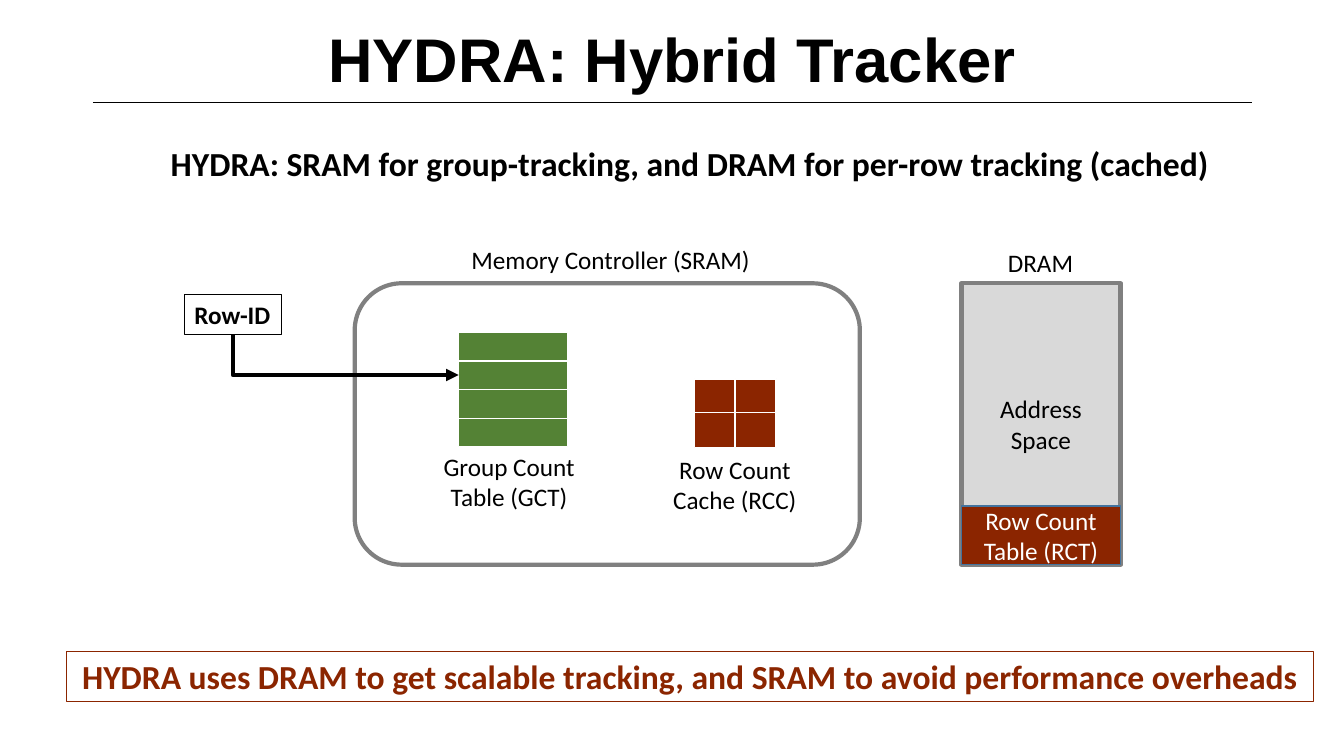
import pptx
import pptx.util
import pptx.dml.color
import pptx.enum.shapes
import pptx.enum.text
import pptx.oxml
import pptx.oxml.ns
from pptx.util import Cm, Pt

SHAPE = pptx.enum.shapes.MSO_SHAPE
CONNECTOR = pptx.enum.shapes.MSO_CONNECTOR
ALIGN = pptx.enum.text.PP_ALIGN
ANCHOR = pptx.enum.text.MSO_ANCHOR
FIT = pptx.enum.text.MSO_AUTO_SIZE

BLACK, WHITE, GRAY, RED, GREEN = "000000", "FFFFFF", "808080", "8B2500", "548235"


def style(shape, fill, line, width):
    """Set fill and outline; None as fill leaves the shape open."""
    shape.shadow.inherit = False
    if fill:
        shape.fill.solid()
        shape.fill.fore_color.rgb = pptx.dml.color.RGBColor.from_string(fill)
    else:
        shape.fill.background()
    shape.line.color.rgb = pptx.dml.color.RGBColor.from_string(line)
    shape.line.width = Pt(width)


def write(shape, text, size=18, color=BLACK, bold=False, align=ALIGN.CENTER,
          anchor=ANCHOR.TOP, wrap=True, fit=FIT.NONE, font="Calibri"):
    frame = shape.text_frame
    frame.text = text
    frame.word_wrap = wrap
    frame.auto_size = fit
    frame.vertical_anchor = anchor
    for paragraph in frame.paragraphs:
        paragraph.alignment = align
        paragraph.font.name = font
        paragraph.font.size = Pt(size)
        paragraph.font.bold = bold
        paragraph.font.color.rgb = pptx.dml.color.RGBColor.from_string(color)


presentation = pptx.Presentation()
presentation.slide_width = Cm(33.87)
presentation.slide_height = Cm(19.05)
slide = presentation.slides.add_slide(presentation.slide_layouts[5])
shapes = slide.shapes

# Title and the rule below it
title = shapes.title
title.left, title.top, title.width, title.height = Cm(1.78), Cm(0.58), Cm(30.33), Cm(1.98)
write(title, "HYDRA: Hybrid Tracker", 44, bold=True, anchor=ANCHOR.MIDDLE, font="Arial")
title.text_frame.paragraphs[0].line_spacing = 0.9
rule = shapes.add_connector(CONNECTOR.STRAIGHT, Cm(2.34), Cm(2.57), Cm(31.55), Cm(2.57))

# Subtitle
subtitle = shapes.add_textbox(Cm(2.36), Cm(3.48), Cm(30.05), Cm(1.27))
write(subtitle, "HYDRA: SRAM for group-tracking, and DRAM for per-row tracking (cached)",
      24, bold=True, fit=FIT.SHAPE_TO_FIT_TEXT)

# DRAM with the row count table at its foot
dram = shapes.add_shape(SHAPE.RECTANGLE, Cm(24.23), Cm(7.14), Cm(4.01), Cm(7.09))
style(dram, "D9D9D9", GRAY, 3)
write(dram, "Address\nSpace", anchor=ANCHOR.MIDDLE)
row_count_table = shapes.add_shape(SHAPE.RECTANGLE, Cm(24.23), Cm(12.75), Cm(4.01), Cm(1.47))
style(row_count_table, RED, "43739E", 1)
write(row_count_table, "Row Count\vTable (RCT)", color=WHITE, anchor=ANCHOR.MIDDLE)

# Memory controller
controller = shapes.add_shape(SHAPE.ROUNDED_RECTANGLE, Cm(8.94), Cm(7.14), Cm(12.73), Cm(7.09))
style(controller, None, GRAY, 3)

# Group count table (4 x 1) and row count cache (2 x 2):
# left, top, cell width, cell height, column step, row step, columns, rows, fill
grids = [
    (11.56, 8.38, 2.74, 0.72, 2.74, 0.72, 1, 4, GREEN),
    (17.5, 9.55, 1.02, 0.89, 1.04, 0.84, 2, 2, RED),
]
for left, top, width, height, column_step, row_step, columns, rows, fill in grids:
    group = shapes.add_group_shape()
    for row in range(rows):
        for column in range(columns):
            cell = group.shapes.add_shape(
                SHAPE.RECTANGLE, Cm(left + column * column_step), Cm(top + row * row_step),
                Cm(width), Cm(height))
            style(cell, fill, WHITE, 1)

# Labels
labels = [
    ("DRAM", 25.15, 6.1, 2.18, 1.02, ALIGN.LEFT),
    ("Memory Controller (SRAM)", 11.63, 6.02, 7.59, 1.02, ALIGN.LEFT),
    ("Group Count\nTable (GCT)", 10.9, 11.25, 3.86, 1.8, ALIGN.CENTER),
    ("Row Count\nCache (RCC)", 16.69, 11.33, 3.66, 1.8, ALIGN.CENTER),
]
for text, left, top, width, height, align in labels:
    label = shapes.add_textbox(Cm(left), Cm(top), Cm(width), Cm(height))
    write(label, text, align=align, wrap=False, fit=FIT.SHAPE_TO_FIT_TEXT)

# Row-ID
row_id = shapes.add_shape(SHAPE.RECTANGLE, Cm(4.65), Cm(7.42), Cm(2.44), Cm(1.02))
style(row_id, None, BLACK, 0.75)
write(row_id, "Row-ID", bold=True, align=ALIGN.LEFT, wrap=False, fit=FIT.SHAPE_TO_FIT_TEXT)

# Elbow arrow into the second group counter: one bend, turned to run down, then right
arrow = shapes.add_connector(CONNECTOR.ELBOW, Cm(9.22), Cm(6.1), Cm(8.21), Cm(11.79))
properties = arrow._element.spPr
properties.find(pptx.oxml.ns.qn("a:prstGeom")).set("prst", "bentConnector2")
properties.find(pptx.oxml.ns.qn("a:xfrm")).set("rot", "16200000")

for connector, width in ((rule, 0.5), (arrow, 3)):
    connector.line.color.rgb = pptx.dml.color.RGBColor.from_string(BLACK)
    connector.line.width = Pt(width)
    connector._element.spPr.append(pptx.oxml.parse_xml(
        "<a:effectLst %s/>" % pptx.oxml.ns.nsdecls("a")))
arrow.line._get_or_add_ln().append(pptx.oxml.parse_xml(
    '<a:tailEnd %s type="triangle"/>' % pptx.oxml.ns.nsdecls("a")))

# Conclusion
conclusion = shapes.add_shape(SHAPE.RECTANGLE, Cm(1.68), Cm(16.41), Cm(31.42), Cm(1.27))
style(conclusion, None, RED, 0.75)
write(conclusion,
      "HYDRA uses DRAM to get scalable tracking, and SRAM to avoid performance overheads",
      24, RED, bold=True, fit=FIT.SHAPE_TO_FIT_TEXT)

presentation.save("out.pptx")
